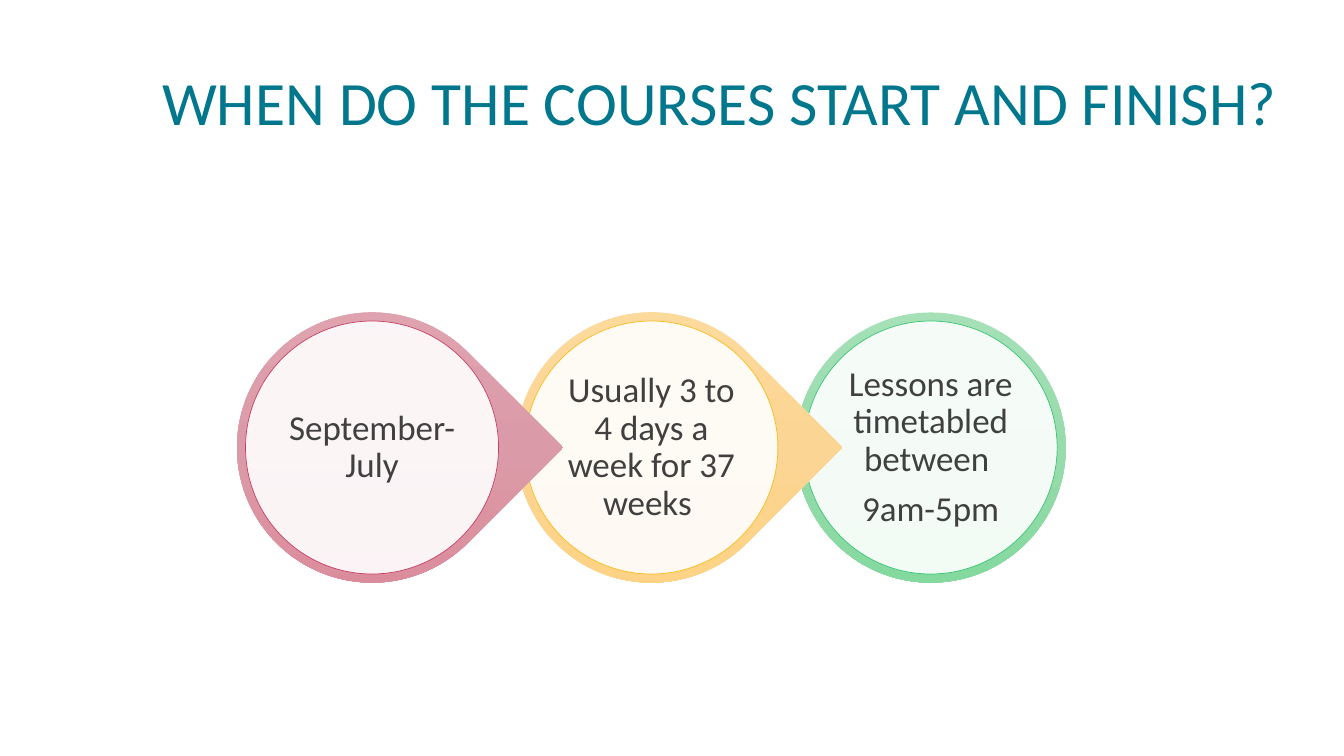
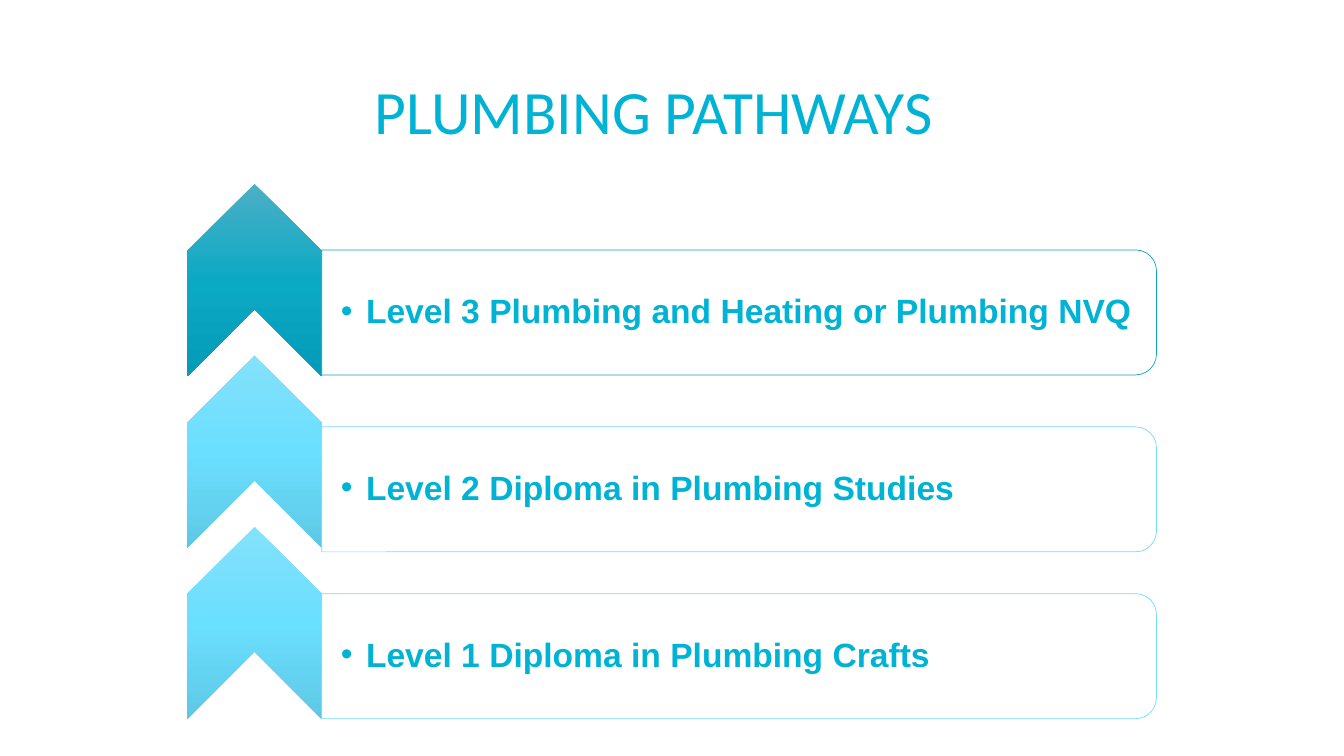
"""Build two slides: course dates as linked circles, and plumbing levels as a ladder."""
from dataclasses import dataclass
from typing import Any, Optional

import pptx
import pptx.dml.color
import pptx.enum.shapes
import pptx.enum.text
import pptx.oxml
import pptx.oxml.ns
import pptx.util

SHAPE = pptx.enum.shapes.MSO_SHAPE
ALIGN = pptx.enum.text.PP_ALIGN
ANCHOR = pptx.enum.text.MSO_ANCHOR
Pt = pptx.util.Pt
CELL = 0.25
WIDE, HIGH = 53.32, 30
TEAL, CYAN, GREY, WHITE = "00778D", "00B3D4", "404040", "FFFFFF"


@dataclass(frozen=True)
class Box:
    """Centre and size in grid cells."""
    x: float
    y: float
    w: float
    h: float


@dataclass(frozen=True)
class Style:
    """Text look: font values, paragraph values, frame values."""
    font: dict[str, Any]
    para: dict[str, Any]
    frame: dict[str, Any]
    bullet: bool = False


@dataclass(frozen=True)
class Disc:
    """One circle of the chain."""
    lines: tuple[str, ...]
    shades: tuple[str, str, str]
    edge: str
    form: Any = SHAPE.TEAR
    turn: int = 45


@dataclass(frozen=True)
class Rung:
    """One level of the ladder."""
    line: str
    mid: float
    shades: tuple[str, str, str]
    edge: str


def cells(num: float) -> int:
    """Turn grid cells into a length."""
    return pptx.util.Inches(num * CELL)


def color(code: str) -> pptx.dml.color.RGBColor:
    """Turn a hex string into a colour."""
    return pptx.dml.color.RGBColor.from_string(code)


def inset(left: float, rest: float) -> dict[str, int]:
    """Give frame margins in cells."""
    sides = {f"margin_{side}": cells(rest) for side in ("right", "top", "bottom")}
    return {"margin_left": cells(left), **sides}


def apply(item: Any, values: dict[str, Any]) -> None:
    """Set each named value on the item."""
    for name, value in values.items():
        setattr(item, name, value)


TITLE = Style({"name": "Calibri", "size": Pt(44)},
              {"line_spacing": 0.85, "alignment": ALIGN.LEFT},
              {"vertical_anchor": ANCHOR.BOTTOM})
LABEL = Style({"name": "Calibri", "size": Pt(25)},
              {"line_spacing": 0.9, "space_after": Pt(8.75), "alignment": ALIGN.CENTER},
              {"vertical_anchor": ANCHOR.MIDDLE, **inset(0.12, 0.12)})
LEVEL = Style({"name": "Arial", "size": Pt(24), "bold": True},
              {"line_spacing": 0.9, "space_after": Pt(3.6), "alignment": ALIGN.LEFT},
              {"vertical_anchor": ANCHOR.MIDDLE, **inset(0.76, 0.08)}, True)

DISCS = (
    Disc(("September-July",), ("E1A7B3", "DB9AA7", "DA8798"), "C74167"),
    Disc(("Usually 3 to 4 days a week for 37 weeks ",),
         ("FDDCA1", "FBD593", "FFD27E"), "F6BD1E"),
    Disc(("Lessons are timetabled between ", "9am-5pm"),
         ("A5E0B7", "98DBAC", "84D99F"), "3AC673", SHAPE.OVAL, 0),
)
PALE = ("84E1FB", "6BDFFF", "5DC8E5")
RUNGS = (
    Rung("Level 3 Plumbing and Heating or Plumbing NVQ", 12.4,
         ("4CAFC7", "0CA9C5", "039BB7"), "14A3BD"),
    Rung("Level 2 Diploma in Plumbing Studies", 19.42, PALE, "72DCF9"),
    Rung("Level 1 Diploma in Plumbing Crafts", 26.04, PALE, "72DCF9"),
)


def place(box: Box) -> tuple[int, ...]:
    """Give left, top, width and height of a box."""
    return tuple(map(cells, (box.x - box.w / 2, box.y - box.h / 2, box.w, box.h)))


def write(slide: Any, box: Box, lines: tuple[str, ...], ink: str, style: Style) -> None:
    """Add a text box."""
    frame = slide.shapes.add_textbox(*place(box)).text_frame
    apply(frame, {"word_wrap": True, **style.frame})
    for spot, line in enumerate(lines):
        para = frame.add_paragraph() if spot else frame.paragraphs[0]
        apply(para, style.para)
        if style.bullet:
            props = para._p.get_or_add_pPr()
            apply_marks = {"marL": cells(1), "indent": -cells(1)}
            for name, value in apply_marks.items():
                props.set(name, str(value))
            space = pptx.oxml.ns.nsdecls("a")
            for mark in ('buFont {} typeface="Arial"', 'buChar {} char="•"'):
                props.append(pptx.oxml.parse_xml(f"<a:{mark.format(space)}/>"))
        run = para.add_run()
        run.text = line
        apply(run.font, style.font)
        run.font.color.rgb = color(ink)


def draw(slide: Any, form: Any, box: Box, turn: int = 0) -> Any:
    """Add a plain shape without shadow."""
    shape = slide.shapes.add_shape(form, *place(box))
    shape.rotation = turn
    shape.shadow.inherit = False
    return shape


def shade(shape: Any, shades: tuple[str, ...]) -> None:
    """Fill from top to bottom of the slide, whatever the turn of the shape."""
    shape.line.fill.background()
    shape.fill.background()
    stops = "".join(f'<a:gs pos="{spot * 50000}"><a:srgbClr val="{code}"/></a:gs>'
                    for spot, code in enumerate(shades))
    node = pptx.oxml.parse_xml(
        f'<a:gradFill {pptx.oxml.ns.nsdecls("a")} rotWithShape="0"><a:gsLst>{stops}'
        '</a:gsLst><a:lin ang="5400000" scaled="0"/></a:gradFill>')
    props = shape.element.spPr
    props.replace(props.find(pptx.oxml.ns.qn("a:noFill")), node)


def glaze(shape: Any, edge: str, alpha: Optional[int] = 90) -> None:
    """Fill with nearly opaque white inside a thin edge."""
    shape.fill.solid()
    shape.fill.fore_color.rgb = color(WHITE)
    tint = shape.element.spPr.find(pptx.oxml.ns.qn("a:solidFill"))[0]
    tint.append(pptx.oxml.parse_xml(
        f'<a:alpha {pptx.oxml.ns.nsdecls("a")} val="{alpha * 1000}"/>'))
    shape.line.color.rgb = color(edge)
    shape.line.width = Pt(0.5)


def chain(slide: Any) -> None:
    """Draw the circles from right to left so each tip overlaps the next."""
    for col, disc in reversed(list(enumerate(DISCS))):
        ring, face, text = (Box(14.76 + 11.08 * col, 17.76, size, size)
                            for size in (10.72, 10.04, 7.16))
        shade(draw(slide, disc.form, ring, disc.turn), disc.shades)
        glaze(draw(slide, SHAPE.OVAL, face), disc.edge)
        write(slide, text, disc.lines, GREY, LABEL)


def ladder(slide: Any) -> None:
    """Draw the chevrons and their panels."""
    for row, rung in enumerate(RUNGS):
        arrow = Box(10.1, 11.12 + 6.8 * row, 7.64, 5.36)
        shade(draw(slide, SHAPE.CHEVRON, arrow, 270), rung.shades)
        panel = Box(29.32, rung.mid, 4.96, 33.12)
        glaze(draw(slide, SHAPE.ROUND_2_SAME_RECTANGLE, panel, 90), rung.edge)
        write(slide, Box(29.2, rung.mid, 32.88, 4.48), (rung.line,), CYAN, LEVEL)


def main() -> None:
    """Build and save the deck."""
    deck = pptx.Presentation()
    apply(deck, {"slide_width": cells(WIDE), "slide_height": cells(HIGH)})
    pages = (
        ("WHEN DO THE COURSES START AND FINISH?", Box(28.94, 2.84, 45.8, 5.68), TEAL, chain),
        ("PLUMBING PATHWAYS", Box(26.68, 4.4, 24.4, 3.28), CYAN, ladder),
    )
    for title, box, ink, body in pages:
        slide = deck.slides.add_slide(deck.slide_layouts[6])
        write(slide, box, (title,), ink, TITLE)
        body(slide)
    deck.save("out.pptx")


if __name__ == "__main__":
    main()
